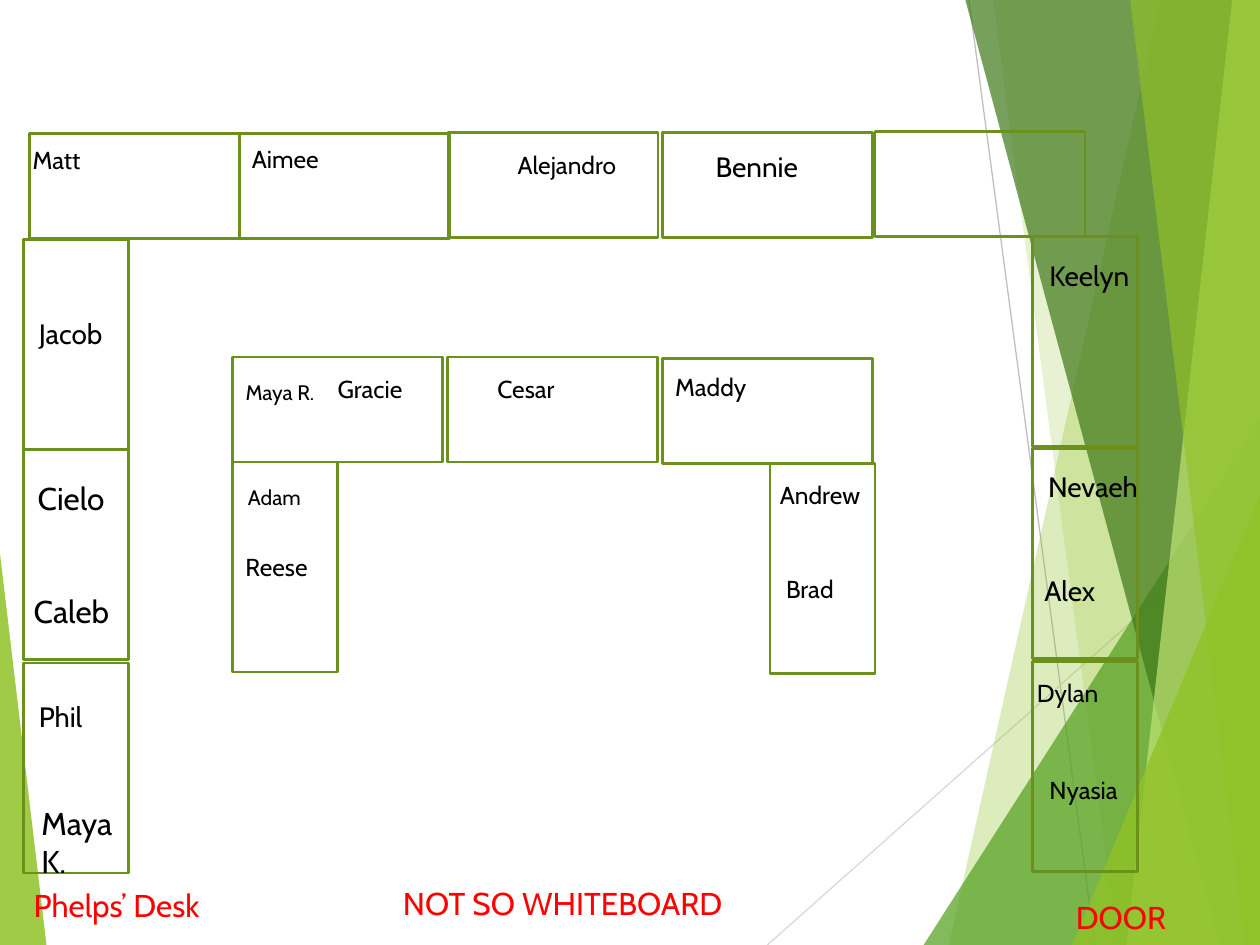
from lxml import etree
from pptx import Presentation
from pptx.dml.color import RGBColor
from pptx.enum.shapes import MSO_CONNECTOR, MSO_SHAPE
from pptx.enum.text import MSO_AUTO_SIZE
from pptx.oxml.ns import qn
from pptx.util import Pt

RECTANGLE = MSO_SHAPE.RECTANGLE
TRIANGLE = MSO_SHAPE.ISOSCELES_TRIANGLE
STRAIGHT = MSO_CONNECTOR.STRAIGHT
FIT_SHAPE = MSO_AUTO_SIZE.SHAPE_TO_FIT_TEXT

SLIDE_W, SLIDE_H = 720, 540
DESK_LONG, DESK_SHORT = 120, 60
FONT = "Cabin"
DESK_GREEN, LEAF_GREEN = "6B901C", "90C226"
BLACK, RED = "000000", "FF0000"

# Upright desks: left edge of each column, tops of its desks
UPRIGHT_DESKS = [
    (13.4, (136.8, 257, 378.9)),
    (589.9, (135.2, 256.2, 378)),
    (133, (264.1,)),
    (440, (265,)),
]

# Sideways desks: (left, top)
SIDEWAYS_DESKS = [
    (16.9, 76.2), (136.9, 76.2), (256, 75.8), (378.6, 75.8), (500, 75.2),
    (133, 204.1), (255.8, 204.1), (378.6, 204.9),
]

# Students: (name, left, top, width, size)
STUDENTS = [
    ("Maya K.", 16.6, 455.8, 56.2, 18),
    ("Phil", 15.1, 396, 56.2, 16),
    ("Caleb", 12.2, 334.8, 64.1, 18),
    ("Cielo", 14.4, 270, 56.2, 18),
    ("Jacob", 15.1, 177.1, 56.2, 16),
    ("Matt", 11.5, 79.2, 97.2, 14),
    ("Aimee", 136.8, 78.5, 56.2, 14),
    ("Alejandro", 288.7, 82.1, 86.4, 14),
    ("Bennie", 401.8, 82.1, 66.2, 16),
    ("Keelyn", 592.6, 144, 67.7, 16),
    ("Nevaeh", 591.8, 265, 68.4, 16),
    ("Alex", 589.7, 324, 56.2, 16),
    ("Dylan", 585.4, 383.8, 84.2, 14),
    ("Nyasia", 592.6, 439.2, 67.7, 14),
    ("Adam", 134.6, 273.6, 56.2, 12),
    ("Gracie", 185.8, 210.2, 56.2, 14),
    ("Cesar", 277.2, 210.2, 77, 14),
    ("Maddy", 378.7, 208.8, 56.2, 14),
    ("Andrew", 438.5, 270.7, 71.3, 14),
    ("Brad", 442.1, 324.7, 67.7, 14),
    ("Reese", 133.2, 311.8, 61.9, 14),
    ("Maya R.", 133.2, 213.1, 56.2, 12),
]

# Room landmarks: (label, left, top, width, size)
LANDMARKS = [
    ("DOOR", 607.7, 509.8, 112.3, 18),
    ("NOT SO WHITEBOARD", 223.2, 501.8, 262.1, 18),
    ("Phelps’ Desk", 12.2, 502.6, 121, 18),
]


def rgb(hex_color):
    return RGBColor.from_string(hex_color)


def paint(shape, color, opacity):
    """Fill a decoration with a translucent colour and no outline."""
    shape.shadow.inherit = False
    shape.line.fill.background()
    shape.fill.solid()
    shape.fill.fore_color.rgb = rgb(color)
    color_xml = shape._element.spPr.find(qn("a:solidFill"))[0]
    etree.SubElement(color_xml, qn("a:alpha")).set("val", str(opacity * 1000))


def add_ray(slide, x1, y1, x2, y2, color):
    ray = slide.shapes.add_connector(STRAIGHT, Pt(x1), Pt(y1), Pt(x2), Pt(y2))
    ray.line.color.rgb = rgb(color)
    ray.line.width = Pt(0.75)
    etree.SubElement(ray._element.spPr, qn("a:effectLst"))


def add_facet(slide, top_x, bottom_x, color, opacity):
    """Full-height band from a slanted left side to the right slide edge."""
    outline = slide.shapes.build_freeform(Pt(top_x), Pt(-0.6))
    outline.add_line_segments([
        (Pt(SLIDE_W), Pt(-0.6)), (Pt(SLIDE_W), Pt(SLIDE_H)),
        (Pt(bottom_x), Pt(SLIDE_H))])
    paint(outline.convert_to_shape(), color, opacity)


def add_corner(slide, left, top, width, apex, color, opacity):
    """Right triangle standing on the bottom edge; apex 0 left, 1 right."""
    corner = slide.shapes.add_shape(
        TRIANGLE, Pt(left), Pt(top), Pt(width), Pt(SLIDE_H - top))
    corner.adjustments[0] = apex
    paint(corner, color, opacity)


def add_desk(slide, left, top, width, height):
    desk = slide.shapes.add_shape(
        RECTANGLE, Pt(left), Pt(top), Pt(width), Pt(height))
    desk.shadow.inherit = False
    desk.fill.background()
    desk.line.color.rgb = rgb(DESK_GREEN)
    desk.line.width = Pt(1.5)


def add_label(slide, text, left, top, width, size, color):
    label = slide.shapes.add_textbox(
        Pt(left), Pt(top), Pt(width), Pt(size * 1.2 + 7.2))
    frame = label.text_frame
    frame.word_wrap = True
    frame.auto_size = FIT_SHAPE
    frame.text = text
    font = frame.paragraphs[0].font
    font.name = FONT
    font.size = Pt(size)
    font.color.rgb = rgb(color)


def add_backdrop(slide):
    add_ray(slide, 553.7, 0, 625.7, SLIDE_H, "BFBFBF")
    add_ray(slide, SLIDE_W, 290.2, 438.5, SLIDE_H, "D9D9D9")
    add_facet(slide, 663.1, 542.2, LEAF_GREEN, 30)
    add_facet(slide, 567.4, 638.6, LEAF_GREEN, 20)
    add_corner(slide, 527.8, 239.8, 192.2, 1, "54A021", 72)
    add_facet(slide, 551.5, 697, "3F7819", 70)
    add_facet(slide, 704.2, 643.7, "C0E474", 70)
    add_facet(slide, 645.8, 711.4, LEAF_GREEN, 65)
    add_corner(slide, 612.7, 283, 107.3, 1, LEAF_GREEN, 80)
    add_corner(slide, 0, 316.1, 26.6, 0, LEAF_GREEN, 85)


def main():
    prs = Presentation()
    prs.slide_width, prs.slide_height = Pt(SLIDE_W), Pt(SLIDE_H)
    slide = prs.slides.add_slide(prs.slide_layouts[6])

    add_backdrop(slide)

    # Desks
    for left, tops in UPRIGHT_DESKS:
        for top in tops:
            add_desk(slide, left, top, DESK_SHORT, DESK_LONG)
    for left, top in SIDEWAYS_DESKS:
        add_desk(slide, left, top, DESK_LONG, DESK_SHORT)

    # Names and landmarks
    for student in STUDENTS:
        add_label(slide, *student, BLACK)
    for landmark in LANDMARKS:
        add_label(slide, *landmark, RED)

    prs.save("out.pptx")


if __name__ == "__main__":
    main()
